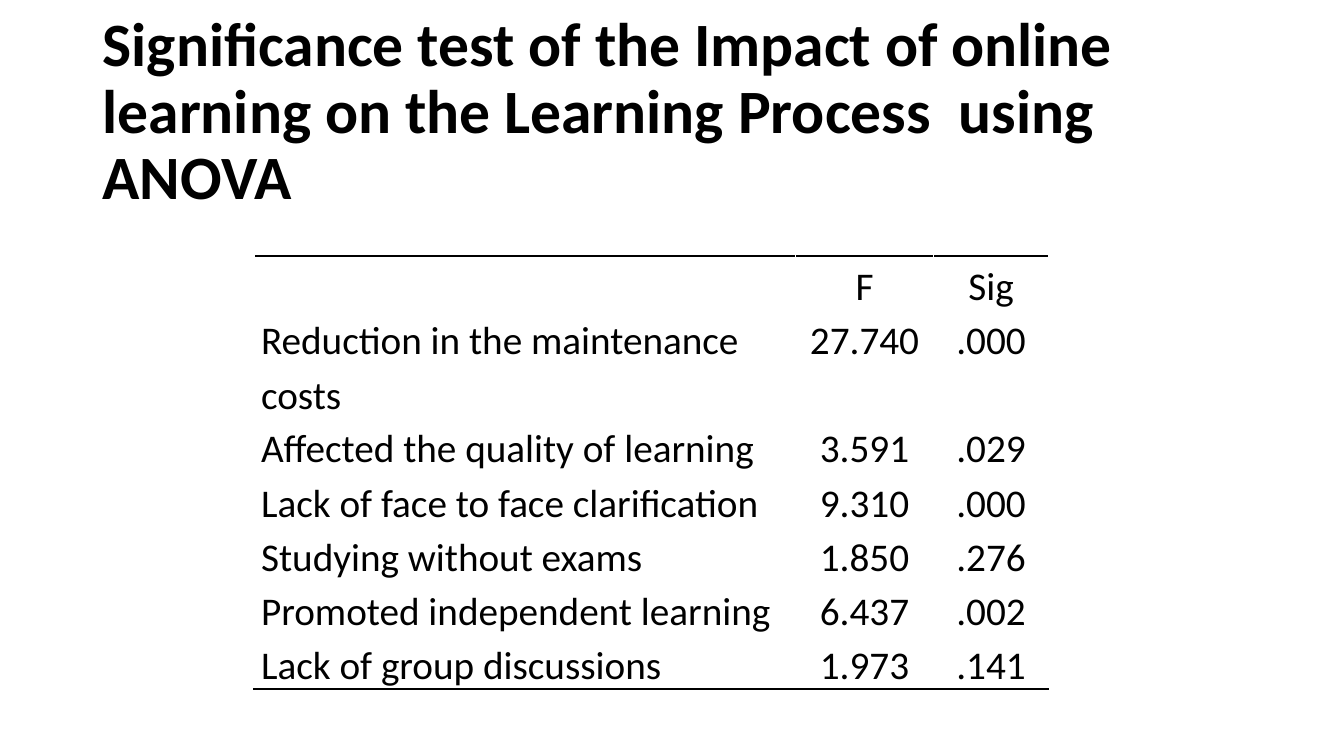
from dataclasses import dataclass

from lxml.etree import SubElement
from pptx import Presentation
from pptx.dml.color import RGBColor
from pptx.enum.text import MSO_ANCHOR, PP_ALIGN
from pptx.oxml.ns import qn
from pptx.util import Inches, Pt


@dataclass(frozen=True)
class Theme:
    font: str = "Calibri"
    ink: str = "000000"
    title_size: int = 44
    table_size: int = 28


theme = Theme()


def style(paragraph, size, spacing, align=PP_ALIGN.LEFT, bold=False):
    paragraph.alignment = align
    paragraph.line_spacing = spacing
    font = paragraph.font
    font.name, font.size, font.bold = theme.font, Pt(size), bold
    font.color.rgb = RGBColor.from_string(theme.ink)


def add_rule(cell, side):
    properties = cell._tc.get_or_add_tcPr()
    rule = SubElement(properties, qn(f"a:{side}"), w=str(Pt(1)))
    fill = SubElement(rule, qn("a:solidFill"))
    SubElement(fill, qn("a:srgbClr"), val=theme.ink)
    properties.insert(0, rule)


presentation = Presentation()
presentation.slide_width = Inches(13.33)
presentation.slide_height = Inches(7.5)
slide = presentation.slides.add_slide(presentation.slide_layouts[6])

# Title
title = slide.shapes.add_textbox(
    Inches(0.92), Inches(0.4), Inches(11.5), Inches(1.45)
).text_frame
title.word_wrap = True
title.vertical_anchor = MSO_ANCHOR.MIDDLE
title.text = (
    "Significance test of the Impact of online learning "
    "on the Learning Process  using ANOVA"
)
style(title.paragraphs[0], theme.title_size, 0.9, bold=True)

# ANOVA results
results = [
    ("", "F", "Sig"),
    ("Reduction in the maintenance costs", "27.740", ".000"),
    ("Affected the quality of learning", "3.591", ".029"),
    ("Lack of face to face clarification", "9.310", ".000"),
    ("Studying without exams", "1.850", ".276"),
    ("Promoted independent learning", "6.437", ".002"),
    ("Lack of group discussions", "1.973", ".141"),
]
column_widths = [5.37, 1.37, 1.14]
row_height = 0.37
anova = slide.shapes.add_table(
    len(results), len(column_widths), Inches(2.52), Inches(2.54),
    Inches(sum(column_widths)), Inches(row_height * len(results)),
).table
anova.first_row = anova.horz_banding = False
for column, width in zip(anova.columns, column_widths):
    column.width = Inches(width)

for r, result in enumerate(results):
    anova.rows[r].height = Inches(row_height)
    for c, value in enumerate(result):
        cell = anova.cell(r, c)
        cell.margin_left = cell.margin_right = Inches(0.07)
        cell.margin_top = cell.margin_bottom = 0
        cell.fill.background()
        cell.text = value
        align = PP_ALIGN.CENTER if c else PP_ALIGN.LEFT
        style(cell.text_frame.paragraphs[0], theme.table_size, 1.15, align)
        # Rules above the header and below the last row
        if r == 0:
            add_rule(cell, "lnT")
        elif r == len(results) - 1:
            add_rule(cell, "lnB")

presentation.save("out.pptx")
